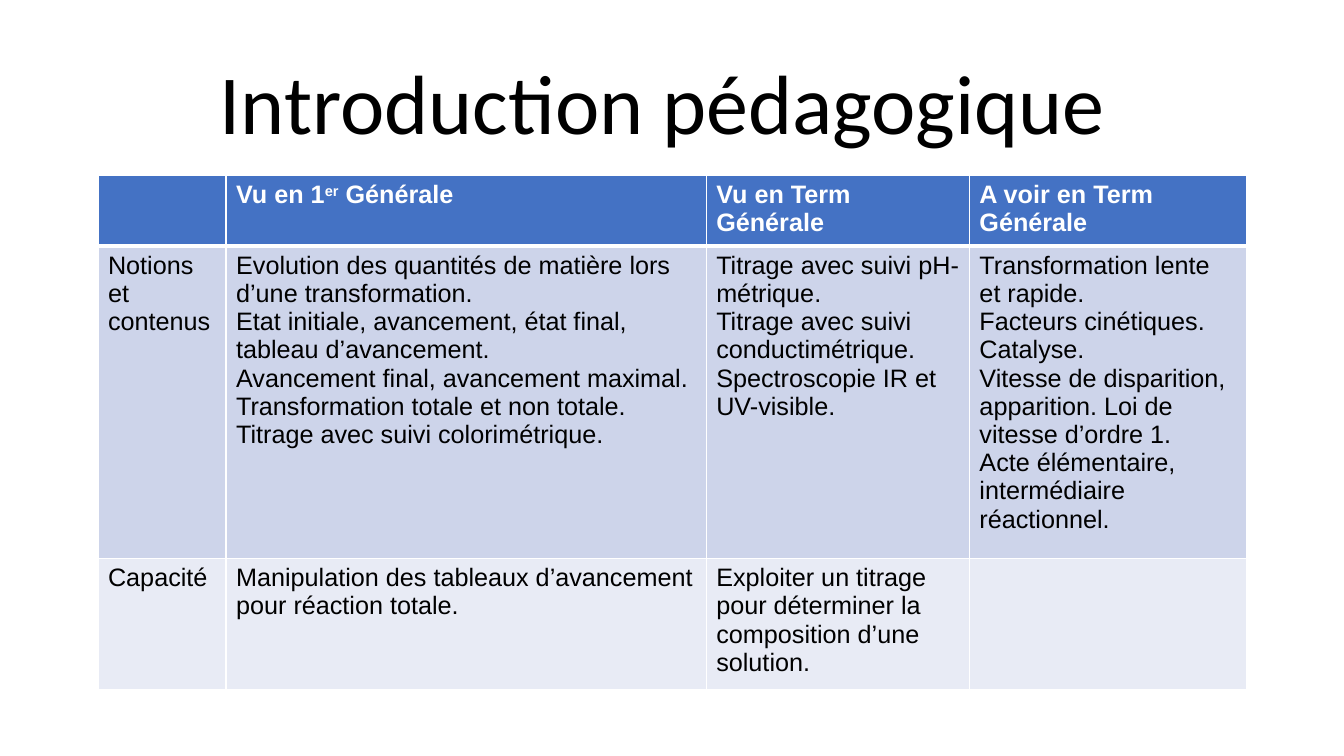
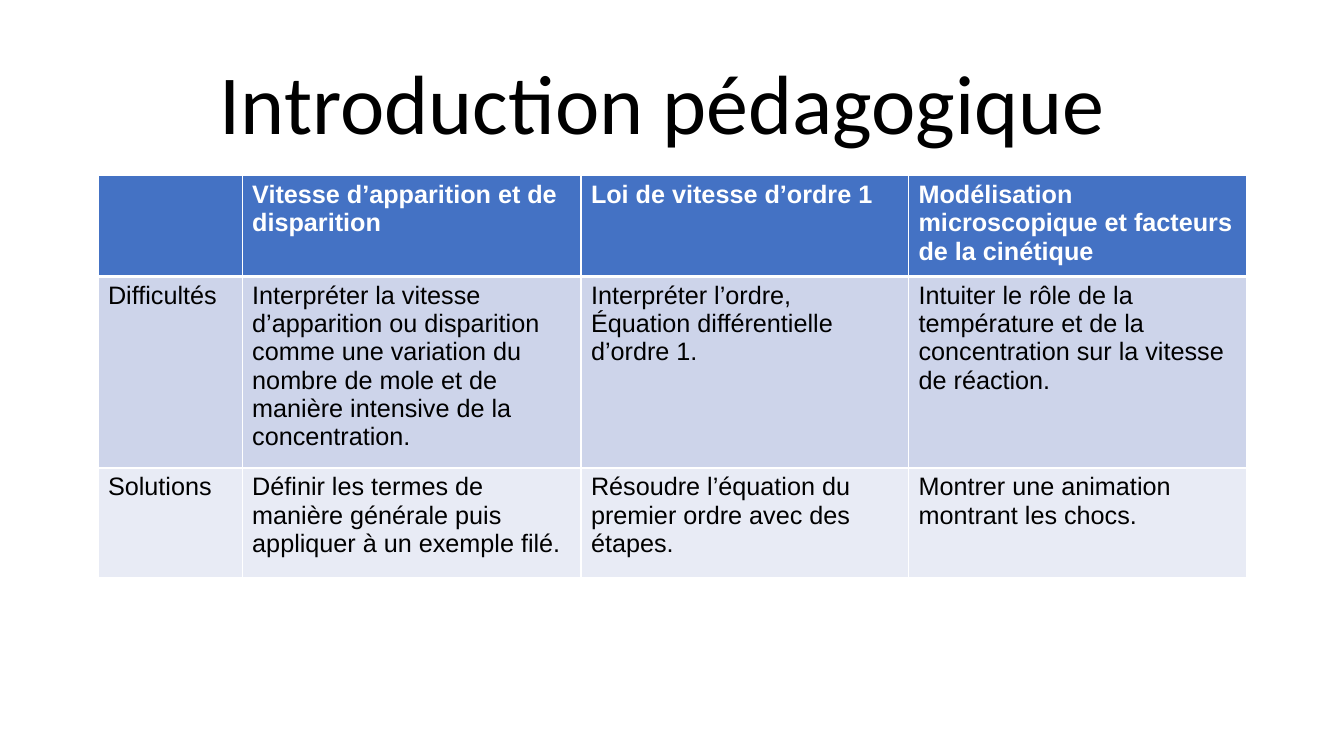
from lxml.etree import SubElement
from pptx import Presentation
from pptx.dml.color import RGBColor
from pptx.enum.text import MSO_ANCHOR, PP_ALIGN
from pptx.oxml.ns import qn
from pptx.util import Pt

# Shared style
BLACK = RGBColor(0x00, 0x00, 0x00)
WHITE = RGBColor(0xFF, 0xFF, 0xFF)
HEADER_BLUE = RGBColor(0x44, 0x72, 0xC4)
ROW_FILLS = [HEADER_BLUE, RGBColor(0xCD, 0xD4, 0xEA), RGBColor(0xE8, 0xEB, 0xF5)]
TITLE_FONT, TABLE_FONT = "Calibri", "Arial"
TITLE = "Introduction pédagogique "
ROW_HEIGHTS = [34, 78.5, 78.5]  # minimum heights, rows grow with their text
THIN, THICK = 1, 3

# Content: each cell is a list of paragraphs; "^" encloses a superscript
PROGRAMME_WIDTHS = [91.5, 343, 188, 198]
PROGRAMME = [
    [[], ["Vu en 1^er^ Générale"], ["Vu en Term Générale"], ["A voir en Term Générale"]],
    [
        ["Notions et contenus"],
        [
            "Evolution des quantités de matière lors d’une transformation.",
            "Etat initiale, avancement, état final, tableau d’avancement.",
            "Avancement final, avancement maximal.",
            "Transformation totale et non totale.",
            "Titrage avec suivi colorimétrique.",
        ],
        [
            "Titrage avec suivi pH-métrique.",
            "Titrage avec suivi conductimétrique.",
            "Spectroscopie IR et UV-visible.",
        ],
        [
            "Transformation lente et rapide.",
            "Facteurs cinétiques.",
            "Catalyse.",
            "Vitesse de disparition, apparition. Loi de vitesse d’ordre 1.",
            "Acte élémentaire, intermédiaire réactionnel.",
        ],
    ],
    [
        ["Capacité"],
        ["Manipulation des tableaux d’avancement pour réaction totale."],
        ["Exploiter un titrage pour déterminer la composition d’une solution."],
        [],
    ],
]

DIFFICULTIES_WIDTHS = [103, 242, 234, 241.5]
DIFFICULTIES = [
    [
        [],
        ["Vitesse d’apparition et de disparition"],
        ["Loi de vitesse d’ordre 1"],
        ["Modélisation microscopique et facteurs de la cinétique"],
    ],
    [
        ["Difficultés"],
        ["Interpréter la vitesse d’apparition ou disparition comme une variation "
         "du nombre de mole et de manière intensive de la concentration."],
        ["Interpréter l’ordre,", "Équation différentielle d’ordre 1."],
        ["Intuiter le rôle de la température et de la concentration sur la vitesse "
         "de réaction."],
    ],
    [
        ["Solutions"],
        ["Définir les termes de manière générale puis appliquer à un exemple filé."],
        ["Résoudre l’équation du premier ordre avec des étapes."],
        ["Montrer une animation montrant les chocs."],
    ],
]


def style_font(font, name, size, color, bold=False):
    font.name, font.size, font.bold = name, Pt(size), bold
    font.color.rgb = color


def add_title(slide):
    title = slide.shapes.add_textbox(Pt(120), Pt(18), Pt(720), Pt(94.5))
    frame = title.text_frame
    frame.word_wrap = True
    frame.vertical_anchor = MSO_ANCHOR.BOTTOM
    frame.text = TITLE
    heading = frame.paragraphs[0]
    heading.alignment = PP_ALIGN.CENTER
    heading.line_spacing = 0.9
    style_font(heading.runs[0].font, TITLE_FONT, 60, BLACK)


def set_borders(cell, top, bottom):
    properties = cell._tc.get_or_add_tcPr()
    for side, width in (("L", THIN), ("R", THIN), ("T", top), ("B", bottom)):
        border = SubElement(properties, qn(f"a:ln{side}"), w=str(Pt(width)))
        fill = SubElement(border, qn("a:solidFill"))
        SubElement(fill, qn("a:srgbClr"), val=str(WHITE))


def write_paragraph(paragraph, text, color, bold):
    for index, part in enumerate(text.split("^")):
        run = paragraph.add_run()
        run.text = part
        style_font(run.font, TABLE_FONT, 18, color, bold)
        if index % 2:
            run._r.get_or_add_rPr().set("baseline", "30000")


def fill_cell(cell, lines, row):
    is_header = row == 0
    # The thick rule separates the header from the body
    set_borders(cell, THICK if row == 1 else THIN, THICK if is_header else THIN)
    cell.fill.solid()
    cell.fill.fore_color.rgb = ROW_FILLS[row]
    frame = cell.text_frame
    for index, line in enumerate(lines):
        paragraph = frame.add_paragraph() if index else frame.paragraphs[0]
        write_paragraph(paragraph, line, WHITE if is_header else BLACK, is_header)


def add_grid(slide, widths, rows):
    grid = slide.shapes.add_table(
        len(rows), len(widths), Pt(70), Pt(125.5), Pt(sum(widths)), Pt(sum(ROW_HEIGHTS))
    ).table
    for column, width in zip(grid.columns, widths):
        column.width = Pt(width)
    for row, height in zip(grid.rows, ROW_HEIGHTS):
        row.height = Pt(height)
    for r, cells in enumerate(rows):
        for c, lines in enumerate(cells):
            fill_cell(grid.cell(r, c), lines, r)


def main():
    deck = Presentation()
    deck.slide_width, deck.slide_height = Pt(960), Pt(540)
    for widths, rows in ((PROGRAMME_WIDTHS, PROGRAMME), (DIFFICULTIES_WIDTHS, DIFFICULTIES)):
        slide = deck.slides.add_slide(deck.slide_layouts[6])
        add_title(slide)
        add_grid(slide, widths, rows)
    deck.save("out.pptx")


if __name__ == "__main__":
    main()
